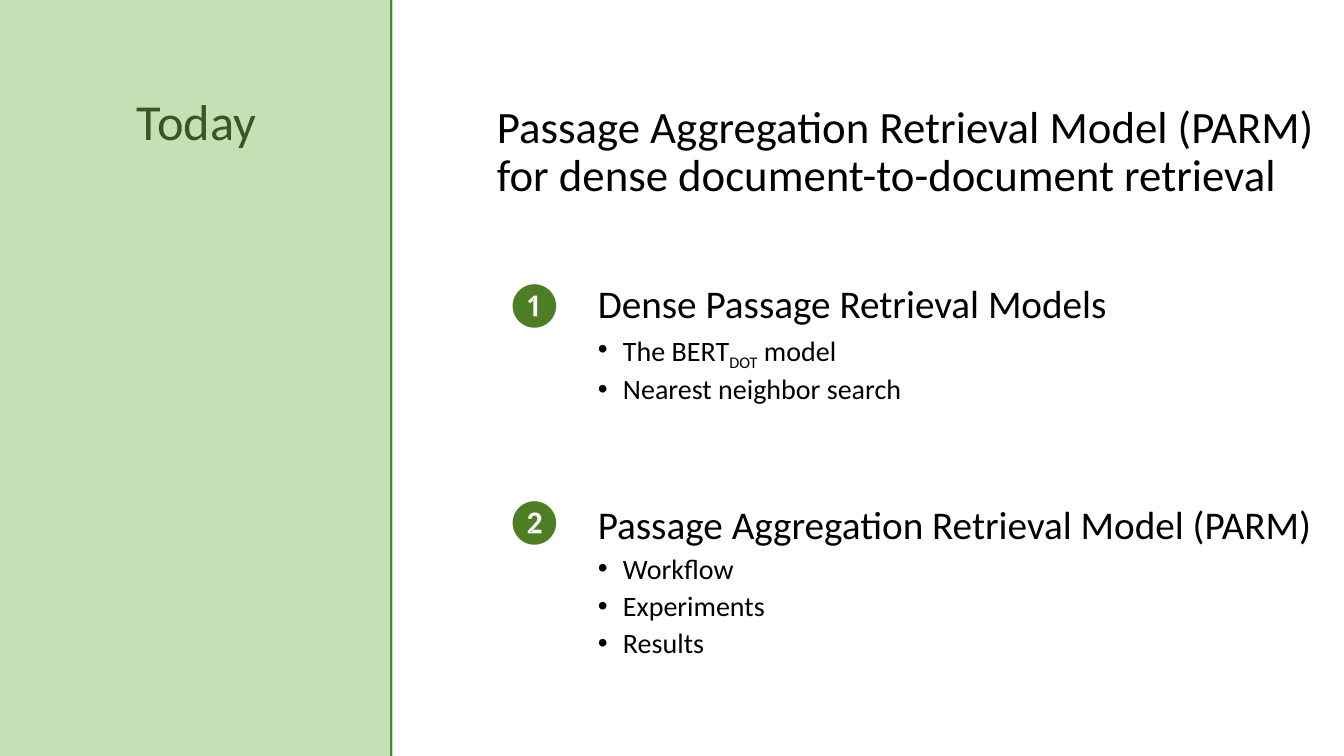
from dataclasses import dataclass

import pptx
import pptx.dml.color
import pptx.enum.shapes
import pptx.enum.text
import pptx.oxml
import pptx.oxml.ns
import pptx.util
from pptx.shapes.base import BaseShape
from pptx.slide import Slide
from pptx.text.text import TextFrame

Inches, Pt = pptx.util.Inches, pptx.util.Pt
RGB = pptx.dml.color.RGBColor.from_string
PP_ALIGN = pptx.enum.text.PP_ALIGN
SLIDE_W, SLIDE_H = Inches(13.333), Inches(7.5)


@dataclass(frozen=True)
class Theme:
    font: str = "Calibri"
    panel: str = "C5E0B4"
    edge: str = "548235"
    title: str = "385723"
    badge: str = "4D7E24"
    text: str = "000000"
    title_size: int = 36
    lead_size: int = 32
    heading_size: int = 28
    bullet_size: int = 20
    spacing: float = 0.9


@dataclass(frozen=True)
class Box:
    """Left, top, width and height in percent of the slide."""
    left: float
    top: float
    width: float
    height: float

    def emu(self) -> tuple[int, int, int, int]:
        return (share_x(self.left), share_y(self.top),
                share_x(self.width), share_y(self.height))


@dataclass(frozen=True)
class Run:
    text: str
    subscript: bool = False


@dataclass(frozen=True)
class Section:
    badge: str
    badge_top: float
    top: float
    heading: str
    bullets: tuple[tuple[Run, ...], ...]


THEME = Theme()
PANEL_W = 29.25
EDGE_X = 29.1
LEAD_LEFT, LEAD_W = 36.23, 63.82
BADGE_LEFT, BADGE_W, BADGE_H = 36.83, 5.48, 8.53
SECTION_LEFT, SECTION_W, SECTION_H = 44.48, 54.8, 22

SECTIONS = (
    Section("❶", 35.87, 37.6, "Dense Passage Retrieval Models", (
        (Run("The BERT"), Run("DOT", subscript=True), Run(" model")),
        (Run("Nearest neighbor search"),),
    )),
    Section("❷", 64.53, 66.87, "Passage Aggregation Retrieval Model (PARM)", (
        (Run("Workflow"),),
        (Run("Experiments"),),
        (Run("Results"),),
    )),
)


def share_x(percent: float) -> int:
    return round(SLIDE_W * percent / 100)


def share_y(percent: float) -> int:
    return round(SLIDE_H * percent / 100)


def add_frame(s: Slide, box: Box, inset: bool = True) -> TextFrame:
    tf = s.shapes.add_textbox(*box.emu()).text_frame
    tf.word_wrap = True
    if not inset:
        tf.margin_left = tf.margin_right = tf.margin_top = tf.margin_bottom = 0
    return tf


def add_paragraph(tf: TextFrame, runs: tuple[Run, ...], size: int, color: str,
                  spacing: float = THEME.spacing, bullet: bool = False,
                  align: PP_ALIGN = PP_ALIGN.LEFT) -> None:
    first = tf.paragraphs[0]
    p = tf.add_paragraph() if first.runs else first
    p.alignment, p.line_spacing = align, spacing
    if bullet:
        p.space_before = Pt(5)
        pPr = p._p.get_or_add_pPr()
        pPr.set("marL", str(Inches(0.25)))
        pPr.set("indent", str(-Inches(0.25)))
        font = pptx.oxml.parse_xml(
            f'<a:buFont {pptx.oxml.ns.nsdecls("a")} typeface="Arial"/>')
        mark = pptx.oxml.parse_xml(
            f'<a:buChar {pptx.oxml.ns.nsdecls("a")} char="•"/>')
        pPr.extend((font, mark))
    for run in runs:
        r = p.add_run()
        r.text = run.text
        r.font.name, r.font.size = THEME.font, Pt(size)
        r.font.color.rgb = RGB(color)
        if run.subscript:
            r._r.get_or_add_rPr().set("baseline", "-25000")


def add_panel(s: Slide) -> BaseShape:
    sp = s.shapes.add_shape(pptx.enum.shapes.MSO_SHAPE.RECTANGLE,
                            *Box(0, 0, PANEL_W, 100).emu())
    sp.shadow.inherit = False
    sp.fill.solid()
    sp.fill.fore_color.rgb = RGB(THEME.panel)
    sp.line.fill.background()
    return sp


def add_edge(s: Slide) -> None:
    x = share_x(EDGE_X)
    line = s.shapes.add_connector(
        pptx.enum.shapes.MSO_CONNECTOR.STRAIGHT, x, 0, x, SLIDE_H)
    line.line.color.rgb = RGB(THEME.edge)
    line.line.width = Pt(1.5)
    line._element.spPr.append(pptx.oxml.parse_xml(
        f'<a:effectLst {pptx.oxml.ns.nsdecls("a")}/>'))


def add_section(s: Slide, section: Section) -> None:
    badge = add_frame(s, Box(BADGE_LEFT, section.badge_top, BADGE_W, BADGE_H))
    add_paragraph(badge, (Run(section.badge),), THEME.lead_size,
                  THEME.badge, spacing=1.0)
    tf = add_frame(s, Box(SECTION_LEFT, section.top, SECTION_W, SECTION_H),
                   inset=False)
    add_paragraph(tf, (Run(section.heading),), THEME.heading_size, THEME.text)
    for runs in section.bullets:
        add_paragraph(tf, runs, THEME.bullet_size, THEME.text, bullet=True)


def main() -> None:
    prs = pptx.Presentation()
    prs.slide_width, prs.slide_height = SLIDE_W, SLIDE_H
    s = prs.slides.add_slide(prs.slide_layouts[6])

    # Side panel with the slide title
    add_panel(s)
    title = add_frame(s, Box(0, 12.13, PANEL_W, 17.87))
    add_paragraph(title, (Run("Today"),), THEME.title_size, THEME.title,
                  align=PP_ALIGN.CENTER)

    # Lead statement
    lead = add_frame(s, Box(LEAD_LEFT, 13.2, LEAD_W, 16))
    add_paragraph(lead, (Run("Passage Aggregation Retrieval Model (PARM) "
                             "for dense document-to-document retrieval"),),
                  THEME.lead_size, THEME.text)

    # Numbered agenda
    for section in SECTIONS:
        add_section(s, section)

    # Edge of the panel
    add_edge(s)
    prs.save("out.pptx")


if __name__ == "__main__":
    main()
